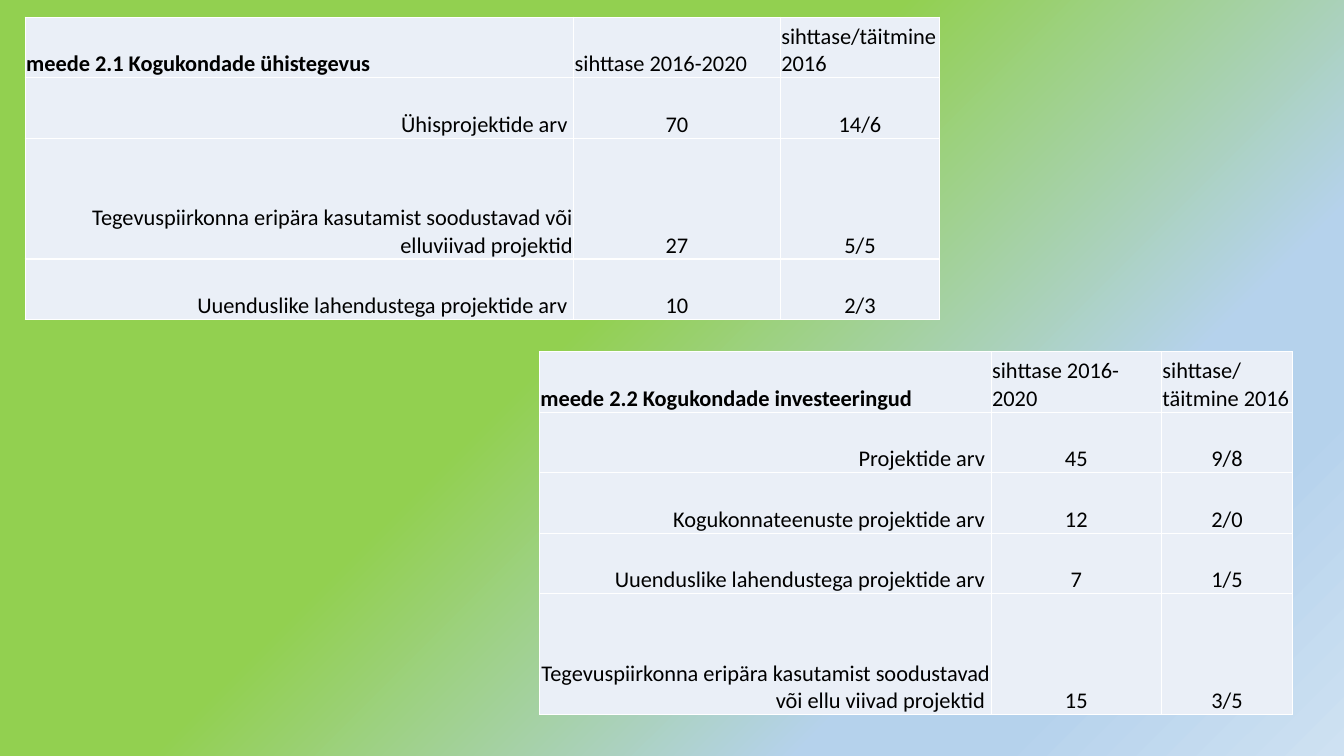
from lxml import etree
from pptx import Presentation
from pptx.dml.color import RGBColor
from pptx.enum import text
from pptx.oxml import ns
from pptx.util import Inches, Pt

LEFT, CENTER, RIGHT = text.PP_ALIGN.LEFT, text.PP_ALIGN.CENTER, text.PP_ALIGN.RIGHT
ROW, TALL_ROW = 0.6, 1.2

JOINT_ACTIVITY = [
    ("meede 2.1 Kogukondade ühistegevus", "sihttase 2016-2020", "sihttase/täitmine 2016"),
    ("Ühisprojektide arv ", "70", "14/6"),
    ("Tegevuspiirkonna eripära kasutamist soodustavad või elluviivad projektid", "27", "5/5"),
    ("Uuenduslike lahendustega projektide arv ", "10", "2/3"),
]
INVESTMENTS = [
    ("meede 2.2 Kogukondade investeeringud", "sihttase 2016-2020", "sihttase/täitmine 2016"),
    ("Projektide arv ", "45", "9/8"),
    ("Kogukonnateenuste projektide arv ", "12", "2/0"),
    ("Uuenduslike lahendustega projektide arv ", "7", "1/5"),
    ("Tegevuspiirkonna eripära kasutamist soodustavad või ellu viivad projektid ", "15", "3/5"),
]


def color(value):
    return RGBColor.from_string(value)


def add_element(parent, tag, **attributes):
    return etree.SubElement(parent, ns.qn(tag), attributes)


def set_background(page, stops):
    """Fill the page with a gradient that spreads from the top left corner."""
    page.background.fill.gradient()
    gradient = page.element.find(".//" + ns.qn("a:gradFill"))
    for child in list(gradient):
        gradient.remove(child)
    stop_list = add_element(gradient, "a:gsLst")
    for percent, value in stops:
        stop = add_element(stop_list, "a:gs", pos=str(percent * 1000))
        add_element(stop, "a:srgbClr", val=value)
    circle = add_element(gradient, "a:path", path="circle")
    add_element(circle, "a:fillToRect", r="100000", b="100000")


def set_borders(cell, value, width):
    properties = cell._tc.get_or_add_tcPr()
    for side in ("a:lnL", "a:lnR", "a:lnT", "a:lnB"):
        line = add_element(properties, side, w=str(Pt(width)))
        fill = add_element(line, "a:solidFill")
        add_element(fill, "a:srgbClr", val=value)


def write_text(cell, content, size=16, bold=False, align=LEFT):
    para = cell.text_frame.paragraphs[0]
    para.alignment = align
    span = para.add_run()
    span.text = content
    span.font.name = "Calibri"
    span.font.size = Pt(size)
    span.font.bold = bold
    span.font.color.rgb = color("000000")


def style_cell(cell):
    cell.margin_left = cell.margin_right = cell.margin_top = Inches(0.01)
    cell.margin_bottom = 0
    cell.vertical_anchor = text.MSO_ANCHOR.BOTTOM
    set_borders(cell, "FFFFFF", 1)
    cell.fill.solid()
    cell.fill.fore_color.rgb = color("EAEFF7")


def add_measure_table(page, left, top, widths, heights, rows):
    frame = page.shapes.add_table(
        len(rows), len(widths), Inches(left), Inches(top),
        Inches(sum(widths)), Inches(sum(heights)))
    table = frame.table
    for column, width in zip(table.columns, widths):
        column.width = Inches(width)
    for row, height in zip(table.rows, heights):
        row.height = Inches(height)
    for r, values in enumerate(rows):
        for c, content in enumerate(values):
            cell = table.cell(r, c)
            style_cell(cell)
            # Headings start at the left, labels end at the right, values are centred
            align = LEFT if r == 0 else RIGHT if c == 0 else CENTER
            write_text(cell, content, bold=r == c == 0, align=align)


def main():
    deck = Presentation()
    deck.slide_width, deck.slide_height = Inches(13.33), Inches(7.5)
    page = deck.slides.add_slide(deck.slide_layouts[6])
    set_background(page, [(43, "92D050"), (74, "B5D2EC"), (83, "B5D2EC"), (100, "CEE1F2")])

    # Measure 2.2, lower right
    add_measure_table(page, 5.35, 3.49, [4.48, 1.69, 1.3],
                      [ROW] * 4 + [TALL_ROW], INVESTMENTS)
    # Measure 2.1, upper left
    add_measure_table(page, 0.25, 0.17, [5.44, 2.05, 1.58],
                      [ROW, ROW, TALL_ROW, ROW], JOINT_ACTIVITY)
    deck.save("out.pptx")


if __name__ == "__main__":
    main()
